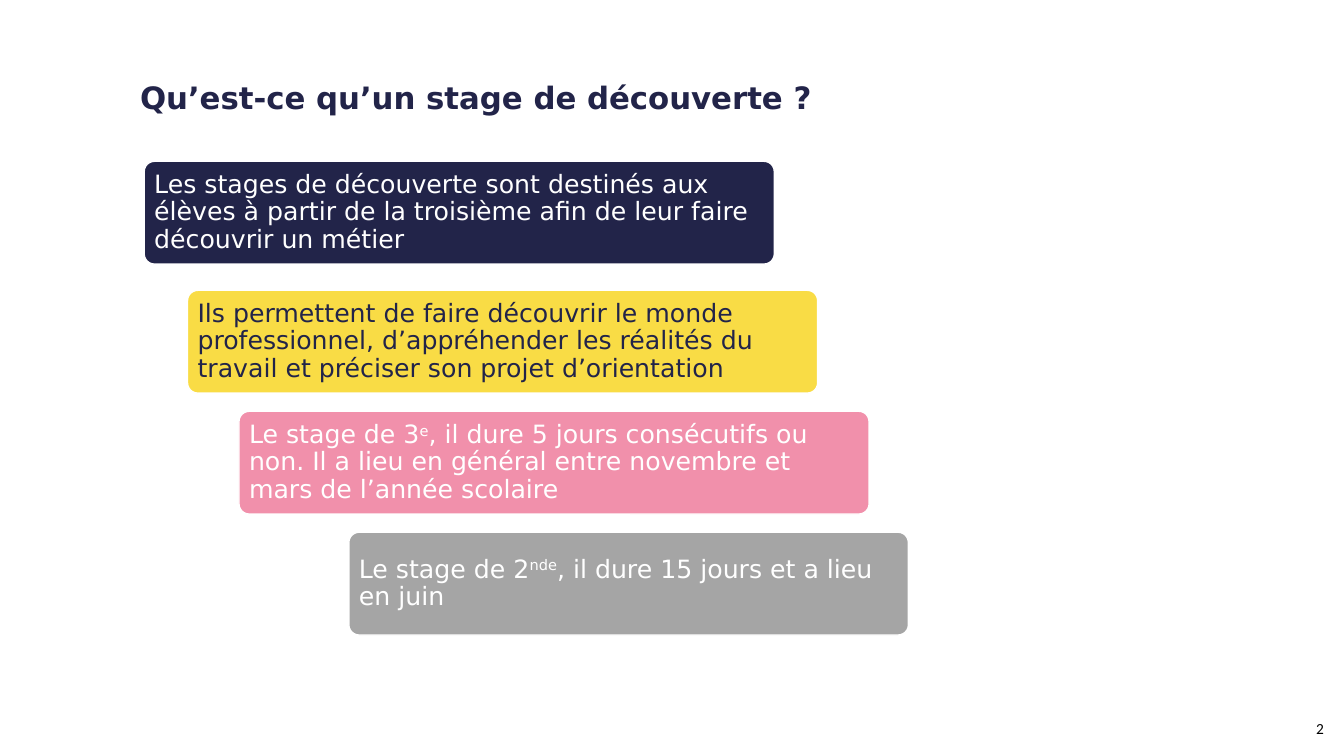
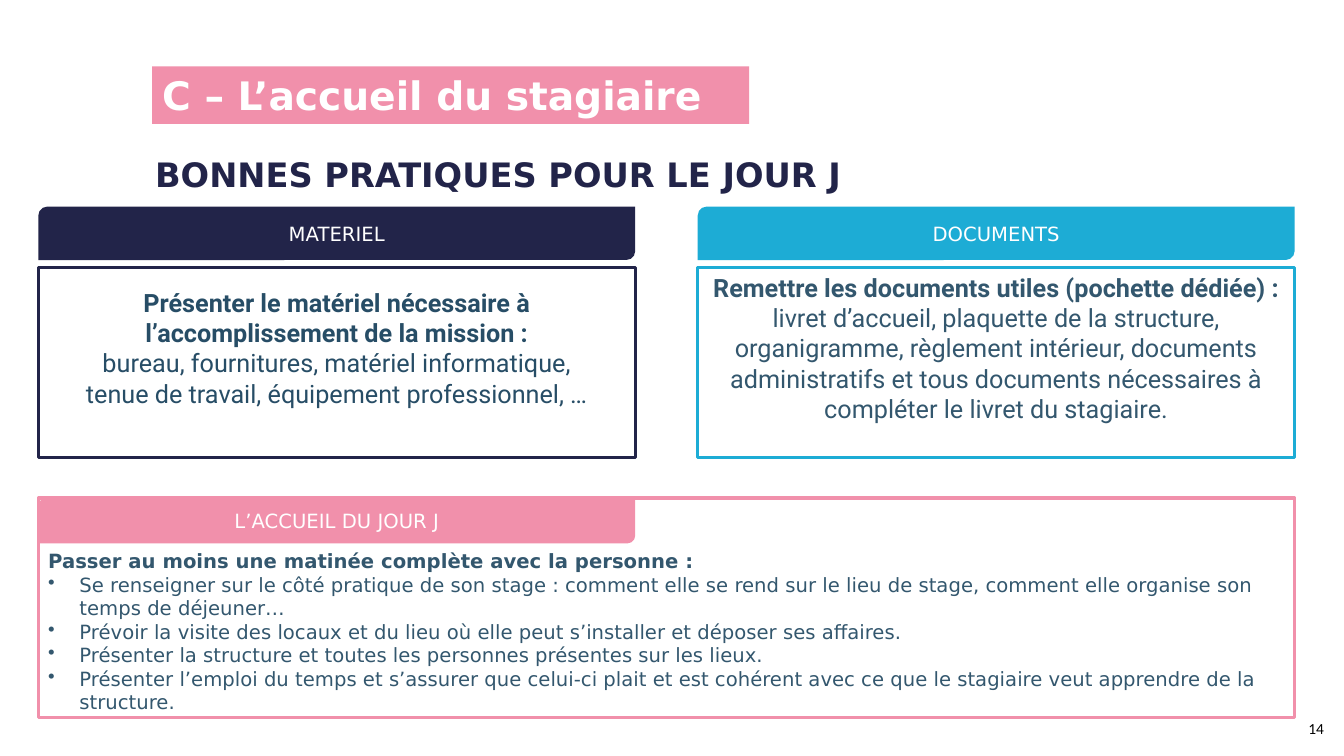
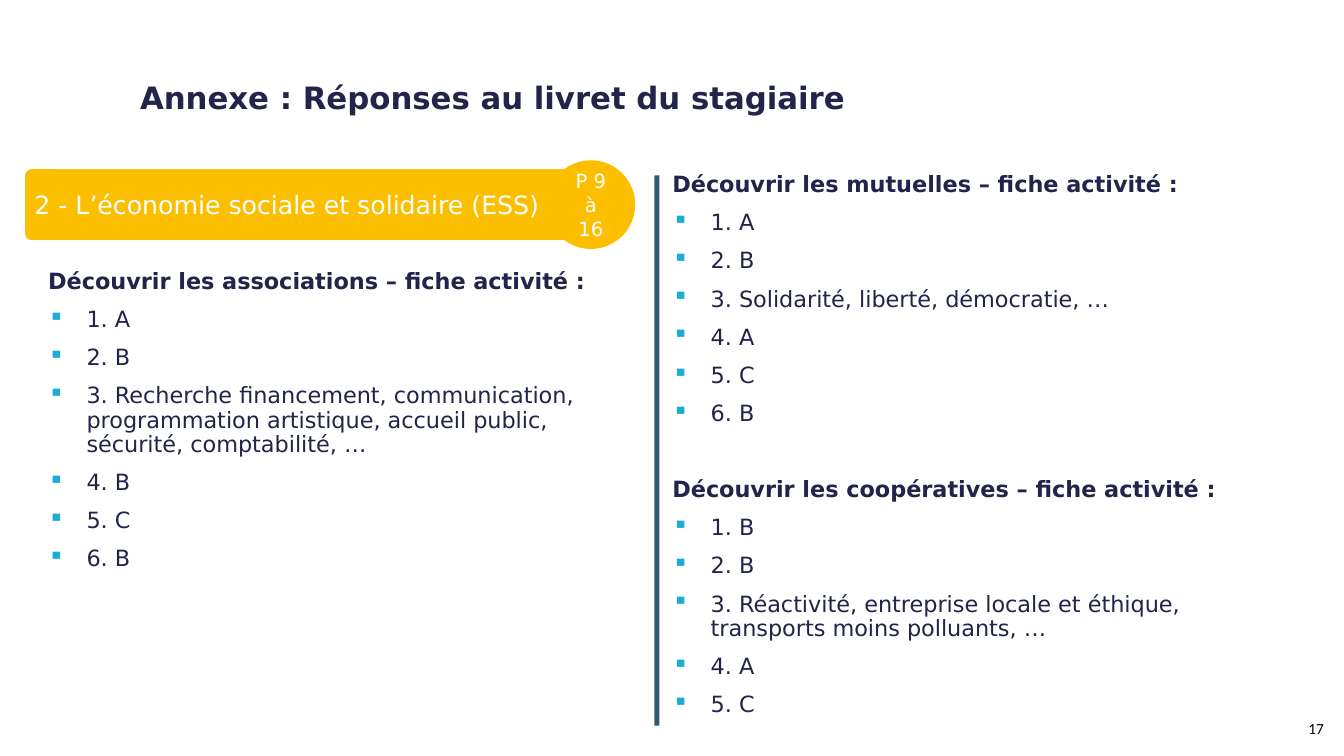
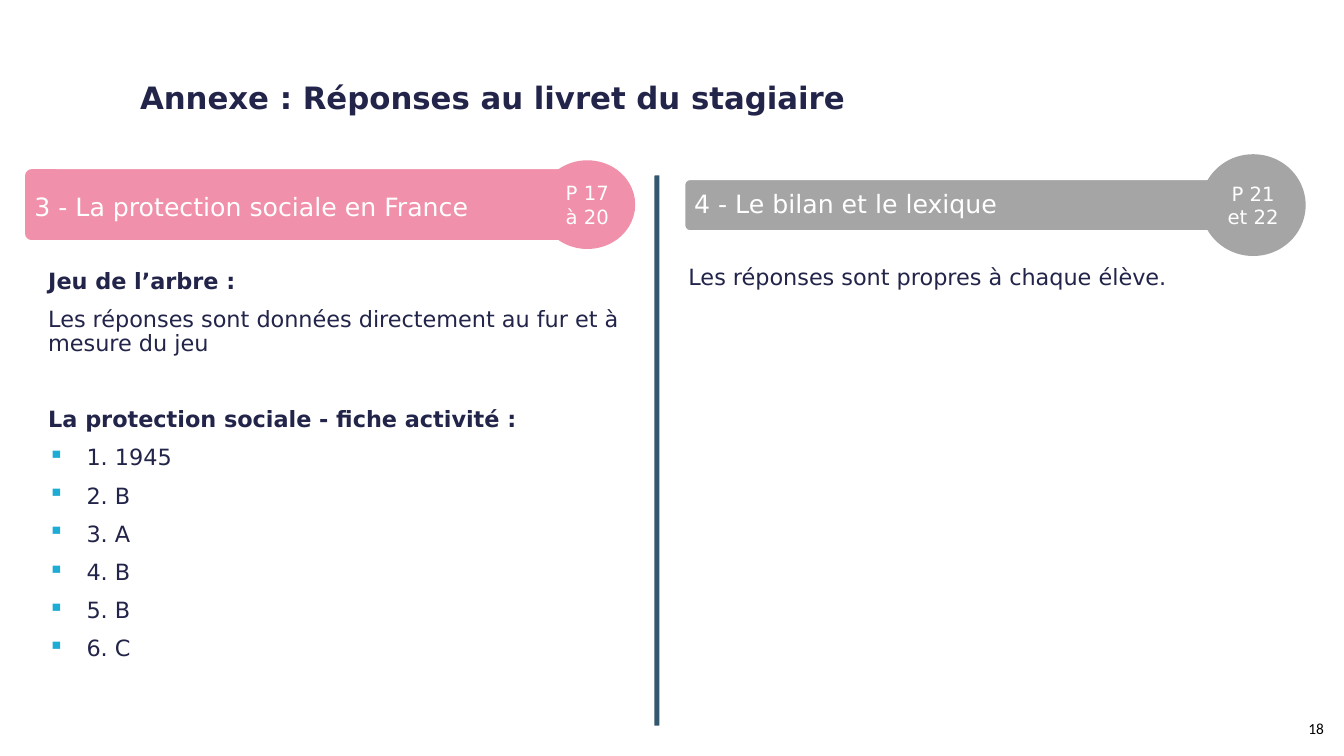
from dataclasses import dataclass

from lxml import etree
from pptx import Presentation
from pptx.dml.color import RGBColor
from pptx.enum.shapes import MSO_SHAPE as Preset
from pptx.enum.text import MSO_ANCHOR as Anchor, PP_ALIGN as Align
from pptx.oxml.ns import qn
from pptx.util import Inches, Pt

COLORS = {
    "navy": "222449", "yellow": "F9DC45", "pink": "F190AB", "grey": "A5A5A5",
    "cyan": "1DACD5", "amber": "FCBF00", "slate": "33576E", "petrol": "274D66",
    "white": "FFFFFF", "black": "000000",
}
FONT = "DejaVu Sans"
INSETS = (0.1, 0.05, 0.1, 0.05)
COLUMN_W = 5.92
COLUMN_LEFT, COLUMN_RIGHT = 0.38, 6.92


@dataclass
class Line:
    """One paragraph; pieces are (text, kind) runs with kind "", "bold" or "sup"."""
    text: str = ""
    bold: bool = False
    bullet: str = ""
    before: float = 0
    pieces: tuple = ()


@dataclass
class Style:
    size: float
    color: str
    font: str = FONT
    align: Align = Align.LEFT
    spacing: float = 1.0
    indent: float = 0.38
    bullet_color: str = ""


TITLE = Style(22, "navy", spacing=0.9)
SUBTITLE = Style(24, "navy", spacing=0.9)
TAB = Style(14, "white", align=Align.CENTER)
ANSWERS = Style(16, "navy", spacing=0.9, bullet_color="cyan")
GUIDANCE = Style(14, "slate", indent=0.31)
PAGE_NUMBER = Style(11, "black", "Calibri", Align.RIGHT)


def rgb(name):
    return RGBColor.from_string(COLORS[name])


def add_bullet(paragraph, char, style):
    props = paragraph._p.get_or_add_pPr()
    props.set("marL", str(Inches(style.indent)))
    props.set("indent", str(-Inches(style.indent)))
    if style.bullet_color:
        color = etree.SubElement(props, qn("a:buClr"))
        etree.SubElement(color, qn("a:srgbClr"), val=COLORS[style.bullet_color])
    etree.SubElement(props, qn("a:buChar"), char=char)


def write(shape, lines, style, anchor=Anchor.TOP, insets=INSETS):
    """Fill a shape with lines; insets are left, top, right, bottom in inches."""
    frame = shape.text_frame
    frame.word_wrap = True
    frame.vertical_anchor = anchor
    (frame.margin_left, frame.margin_top,
     frame.margin_right, frame.margin_bottom) = map(Inches, insets)
    for index, line in enumerate(lines):
        paragraph = frame.add_paragraph() if index else frame.paragraphs[0]
        paragraph.alignment = style.align
        paragraph.line_spacing = style.spacing
        paragraph.space_before = Pt(line.before if index else 0)
        if line.bullet:
            add_bullet(paragraph, line.bullet, style)
        font = paragraph.font
        font.name, font.size, font.bold = style.font, Pt(style.size), line.bold
        font.color.rgb = rgb(style.color)
        for text, kind in line.pieces or ((line.text, ""),):
            run = paragraph.add_run()
            run.text = text
            if kind == "bold":
                run.font.bold = True
            elif kind == "sup":
                run._r.get_or_add_rPr().set("baseline", "30000")


def add_panel(slide, preset, box, fill, line=None, line_width=1):
    panel = slide.shapes.add_shape(preset, *map(Inches, box))
    panel.shadow.inherit = False
    panel.fill.solid()
    panel.fill.fore_color.rgb = rgb(fill)
    if line:
        panel.line.color.rgb = rgb(line)
        panel.line.width = Pt(line_width)
    else:
        panel.line.fill.background()
    return panel


def add_text(slide, box, lines, style):
    write(slide.shapes.add_textbox(*map(Inches, box)), lines, style)


def add_rounded(slide, box, fill):
    panel = add_panel(slide, Preset.ROUNDED_RECTANGLE, box, fill, "white")
    panel.adjustments[0] = 0.1
    return panel


def new_slide(deck, number, title=None):
    slide = deck.slides.add_slide(deck.slide_layouts[6])
    if title:
        add_text(slide, (1.29, 0.77, 11.11, 0.55), [Line(title, bold=True)], TITLE)
    add_text(slide, (12.73, 7.08, 0.5, 0.29), [Line(number)], PAGE_NUMBER)
    return slide


def add_step(slide, box, fill, color, line):
    write(add_rounded(slide, box, fill), [line], Style(18, color, spacing=0.9),
          Anchor.MIDDLE, (0.07,) * 4)


def add_tab(slide, box, fill, label):
    tab = add_panel(slide, Preset.ROUND_2_DIAG_RECTANGLE, box, fill)
    write(tab, [Line(label)], TAB, Anchor.MIDDLE)


def add_card(slide, left, top, accent, text_color, label, lines):
    """A coloured tab above a framed box, whose text sits a little high."""
    add_tab(slide, (left, top, COLUMN_W, 0.53), accent, label)
    frame = add_panel(slide, Preset.RECTANGLE, (left, top + 0.6, COLUMN_W, 1.89),
                      "white", accent, 2.25)
    write(frame, lines, Style(18, text_color, "Roboto", Align.CENTER),
          Anchor.MIDDLE, (0.1, 0.05, 0.1, 0.34))


def add_banner(slide, box, fill, label, badge_size, pages, drop=0):
    """A section bar ending in a round page badge; drop lowers the label."""
    left, top, width, height = box
    write(add_rounded(slide, box, fill), [Line(label)],
          Style(18, "white", spacing=0.9), Anchor.MIDDLE,
          (0.08, 0.07 + 2 * drop, 0.07, 0.07))
    badge_w, badge_h = badge_size
    badge = add_panel(slide, Preset.OVAL,
                      (left + width + 0.15 - badge_w, top + (height - badge_h) / 2,
                       badge_w, badge_h), fill)
    write(badge, [Line(pages)], TAB, Anchor.MIDDLE)


def add_divider(slide):
    add_panel(slide, Preset.ROUND_2_DIAG_RECTANGLE, (6.49, 1.74, 0.05, 5.46), "slate")


def activity(title, answers, before=10):
    """A bold heading followed by its numbered, bulleted answers."""
    return [Line(title, bold=True, before=before)] + [
        Line(f"{number}. {answer}", bullet="▪", before=10)
        for number, answer in enumerate(answers, 1)]


def build_definition(deck):
    slide = new_slide(deck, "2", "Qu’est-ce qu’un stage de découverte ?")
    steps = [
        (1.43, 1.6, 6.25, "navy", "white", Line(
            "Les stages de découverte sont destinés aux élèves à partir de la "
            "troisième afin de leur faire découvrir un métier")),
        (1.86, 2.88, 6.25, "yellow", "navy", Line(
            "Ils permettent de faire découvrir le monde professionnel, d’appréhender "
            "les réalités du travail et préciser son projet d’orientation")),
        (2.37, 4.08, 6.25, "pink", "white", Line(pieces=(
            ("Le stage de 3", ""), ("e", "sup"),
            (", il dure 5 jours consécutifs ou non. Il a lieu en général entre "
             "novembre et mars de l’année scolaire", "")))),
        (3.46, 5.28, 5.55, "grey", "white", Line(pieces=(
            ("Le stage de 2", ""), ("nde", "sup"),
            (", il dure 15 jours et a lieu en juin", "")))),
    ]
    for left, top, width, fill, color, line in steps:
        add_step(slide, (left, top, width, 1.02), fill, color, line)


def build_welcome(deck):
    slide = new_slide(deck, "14")
    heading = add_panel(slide, Preset.RECTANGLE, (1.51, 0.66, COLUMN_W, 0.57), "pink")
    write(heading, [Line("C – L’accueil du stagiaire", bold=True)], Style(28, "white"))
    add_text(slide, (1.44, 1.52, 7.81, 0.45),
             [Line("BONNES PRATIQUES POUR LE JOUR J", bold=True)], SUBTITLE)
    add_card(slide, COLUMN_LEFT, 2.05, "navy", "petrol", "MATERIEL", [
        Line("Présenter le matériel nécessaire à l’accomplissement de la mission :",
             bold=True),
        Line("bureau, fournitures, matériel informatique,"),
        Line("tenue de travail, équipement professionnel, …")])
    add_card(slide, COLUMN_RIGHT, 2.05, "cyan", "slate", "DOCUMENTS", [Line(pieces=(
        ("Remettre les documents utiles (pochette dédiée) : ", "bold"),
        ("livret d’accueil, plaquette de la structure, organigramme, règlement "
         "intérieur, documents administratifs et tous documents nécessaires à "
         "compléter le livret du stagiaire.", "")))])

    advice = [
        "Se renseigner sur le côté pratique de son stage : comment elle se rend sur le "
        "lieu de stage, comment elle organise son temps de déjeuner…",
        "Prévoir la visite des locaux et du lieu où elle peut s’installer et déposer "
        "ses affaires.",
        "Présenter la structure et toutes les personnes présentes sur les lieux.",
        "Présenter l’emploi du temps et s’assurer que celui-ci plait et est cohérent "
        "avec ce que le stagiaire veut apprendre de la structure.",
    ]
    day = add_panel(slide, Preset.RECTANGLE, (COLUMN_LEFT, 4.94, 12.46, 2.18),
                    "white", "pink", 2.25)
    write(day, [Line("Passer au moins une matinée complète avec la personne :", bold=True)]
          + [Line(text, bullet="•") for text in advice],
          GUIDANCE, Anchor.MIDDLE, (0.1, 0.47, 0.1, 0))
    add_tab(slide, (COLUMN_LEFT, 4.94, COLUMN_W, 0.45), "pink", "L’ACCUEIL DU JOUR J")


def new_answers_slide(deck, number, left_lines):
    slide = new_slide(deck, number, "Annexe : Réponses au livret du stagiaire")
    add_text(slide, (COLUMN_LEFT, 2.63, COLUMN_W, 4.28), left_lines, ANSWERS)
    add_divider(slide)
    return slide


def build_economy_answers(deck):
    slide = new_answers_slide(deck, "17", activity(
        "Découvrir les associations – fiche activité :",
        ["A", "B", "Recherche financement, communication, programmation artistique, "
         "accueil public, sécurité, comptabilité, …", "B", "C", "B"]))
    add_banner(slide, (0.24, 1.67, 5.91, 0.72), "amber",
               "2 - L’économie sociale et solidaire (ESS)", (0.88, 0.88), "P 9 à 16", 0.02)
    add_text(slide, (6.57, 1.67, 6.22, 5.36), activity(
        "Découvrir les mutuelles – fiche activité :",
        ["A", "B", "Solidarité, liberté, démocratie, …", "A", "C", "B"]) + activity(
        "Découvrir les coopératives – fiche activité :",
        ["B", "B", "Réactivité, entreprise locale et éthique, transports moins "
         "polluants, …", "A", "C"], before=37), ANSWERS)


def build_protection_answers(deck):
    slide = new_answers_slide(deck, "18", [
        Line("Jeu de l’arbre :", bold=True),
        Line("Les réponses sont données directement au fur et à mesure du jeu", before=10),
        *activity("La protection sociale - fiche activité :",
                  ["1945", "B", "A", "B", "B", "C"], before=37)])
    add_banner(slide, (0.24, 1.67, 5.91, 0.72), "pink",
               "3 - La protection sociale en France", (0.95, 0.88), "P 17 à 20", 0.04)
    add_banner(slide, (6.79, 1.78, 6.01, 0.51), "grey",
               "4 - Le bilan et le lexique", (1.04, 1.01), "P 21 et 22")
    add_text(slide, (6.73, 2.59, 6.22, 0.55),
             [Line("Les réponses sont propres à chaque élève.")], ANSWERS)


def main():
    deck = Presentation()
    deck.slide_width, deck.slide_height = Inches(13.33), Inches(7.5)
    for build in (build_definition, build_welcome,
                  build_economy_answers, build_protection_answers):
        build(deck)
    deck.save("out.pptx")


if __name__ == "__main__":
    main()
